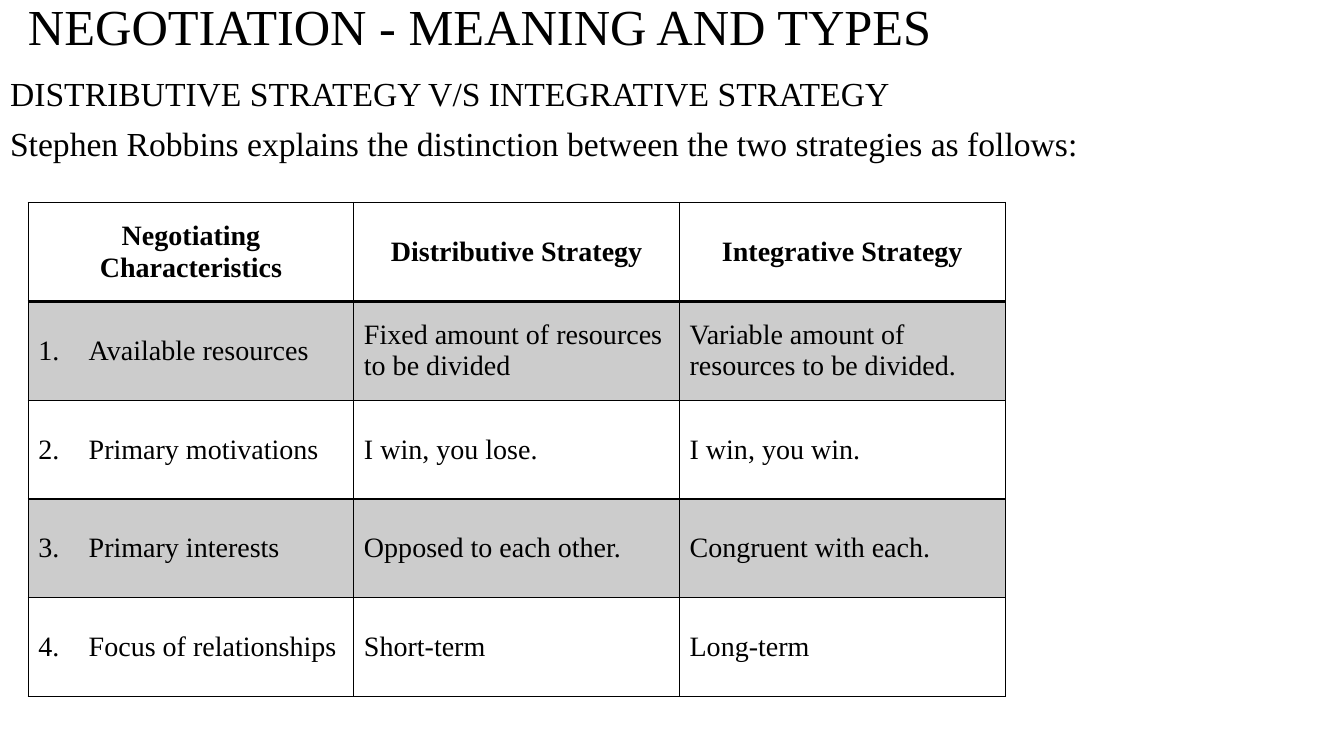
from dataclasses import dataclass

from lxml import etree
from pptx import Presentation, util as u
from pptx.dml.color import RGBColor
from pptx.enum import text
from pptx.oxml import ns


@dataclass(frozen=True)
class Theme:
    font: str = "Times New Roman"
    ink: str = "000000"
    title_size: int = 36
    body_size: int = 24
    table_size: int = 20
    band_opacity: int = 20
    line: int = 1
    header_line: int = 2


THEME = Theme()
SLIDE_WIDTH, SLIDE_HEIGHT = u.Inches(13.33), u.Inches(7.5)
COLUMN_WIDTH, ROW_HEIGHT = u.Inches(3.23), u.Inches(0.98)
HANGING = u.Inches(0.5)

TITLE = "NEGOTIATION - MEANING AND TYPES"
INTRODUCTION = [
    "DISTRIBUTIVE STRATEGY V/S INTEGRATIVE STRATEGY",
    "Stephen Robbins explains the distinction between the two strategies as follows:",
]
STRATEGIES = [
    ("Negotiating Characteristics", "Distributive Strategy", "Integrative Strategy"),
    ("Available resources", "Fixed amount of resources to be divided",
     "Variable amount of resources to be divided."),
    ("Primary motivations", "I win, you lose.", "I win, you win."),
    ("Primary interests", "Opposed to each other.", "Congruent with each."),
    ("Focus of relationships", "Short-term", "Long-term"),
]


def add_element(parent, tag, **attributes):
    element = etree.SubElement(parent, ns.qn(tag))
    for name, value in attributes.items():
        element.set(name, str(value))
    return element


def format_runs(paragraph, size, bold=False):
    for run in paragraph.runs:
        run.font.name = THEME.font
        run.font.size = u.Pt(size)
        run.font.bold = bold
        run.font.color.rgb = RGBColor.from_string(THEME.ink)


def place(shape, left, top, width, height):
    """Position a shape by shares of the slide's size."""
    shape.left, shape.width = (int(SLIDE_WIDTH * share) for share in (left, width))
    shape.top, shape.height = (int(SLIDE_HEIGHT * share) for share in (top, height))


def fill_title(title):
    place(title, 0, 0, 0.714, 0.076)
    frame = title.text_frame
    frame.text = TITLE
    frame.auto_size = text.MSO_AUTO_SIZE.NONE
    frame.vertical_anchor = text.MSO_ANCHOR.MIDDLE
    paragraph = frame.paragraphs[0]
    paragraph.alignment = text.PP_ALIGN.CENTER
    paragraph.line_spacing = 0.9
    format_runs(paragraph, THEME.title_size)


def fill_body(body):
    place(body, 0, 0.096, 0.928, 0.904)
    frame = body.text_frame
    frame.text = "\n".join(INTRODUCTION)
    frame.auto_size = text.MSO_AUTO_SIZE.NONE
    for index, paragraph in enumerate(frame.paragraphs):
        properties = paragraph._p.get_or_add_pPr()
        properties.set("marL", "0")
        properties.set("indent", "0")
        add_element(properties, "a:buNone")
        paragraph.line_spacing = 0.9
        paragraph.space_before = u.Pt(10 if index else 0)
        format_runs(paragraph, THEME.body_size)


def number_paragraph(paragraph, number):
    properties = paragraph._p.get_or_add_pPr()
    properties.set("marL", str(HANGING))
    properties.set("indent", str(-HANGING))
    add_element(properties, "a:buFont", typeface="+mj-lt")
    add_element(properties, "a:buAutoNum", type="arabicPeriod", startAt=number)


def draw_borders(cell, top, bottom):
    properties = cell._tc.get_or_add_tcPr()
    widths = {"a:lnL": THEME.line, "a:lnR": THEME.line, "a:lnT": top, "a:lnB": bottom}
    for tag, width in widths.items():
        line = add_element(properties, tag, w=u.Pt(width))
        add_element(add_element(line, "a:solidFill"), "a:srgbClr", val=THEME.ink)


def fill_cell(cell, banded):
    if not banded:
        cell.fill.background()
        return
    cell.fill.solid()
    cell.fill.fore_color.rgb = RGBColor.from_string(THEME.ink)
    color = cell._tc.tcPr.find(ns.qn("a:solidFill")).find(ns.qn("a:srgbClr"))
    add_element(color, "a:alpha", val=THEME.band_opacity * 1000)


def write_cell(cell, content, row, column):
    header = row == 0
    cell.text_frame.text = content
    cell.vertical_anchor = text.MSO_ANCHOR.MIDDLE
    paragraph = cell.text_frame.paragraphs[0]
    if header:
        paragraph.alignment = text.PP_ALIGN.CENTER
    elif column == 0:
        number_paragraph(paragraph, row)
    format_runs(paragraph, THEME.table_size, bold=header)
    draw_borders(cell,
                 top=THEME.header_line if row == 1 else THEME.line,
                 bottom=THEME.header_line if header else THEME.line)
    fill_cell(cell, banded=row % 2 == 1)


def add_strategy_table(slide):
    rows, columns = len(STRATEGIES), len(STRATEGIES[0])
    table = slide.shapes.add_table(
        rows, columns, u.Inches(0.28), u.Inches(2.01),
        COLUMN_WIDTH * columns, ROW_HEIGHT * rows).table
    for column in table.columns:
        column.width = COLUMN_WIDTH
    for row, contents in enumerate(STRATEGIES):
        table.rows[row].height = ROW_HEIGHT
        for column, content in enumerate(contents):
            write_cell(table.cell(row, column), content, row, column)


def main():
    presentation = Presentation()
    presentation.slide_width, presentation.slide_height = SLIDE_WIDTH, SLIDE_HEIGHT
    slide = presentation.slides.add_slide(presentation.slide_layouts[1])
    fill_title(slide.shapes.title)
    fill_body(slide.placeholders[1])
    add_strategy_table(slide)
    presentation.save("out.pptx")


if __name__ == "__main__":
    main()
